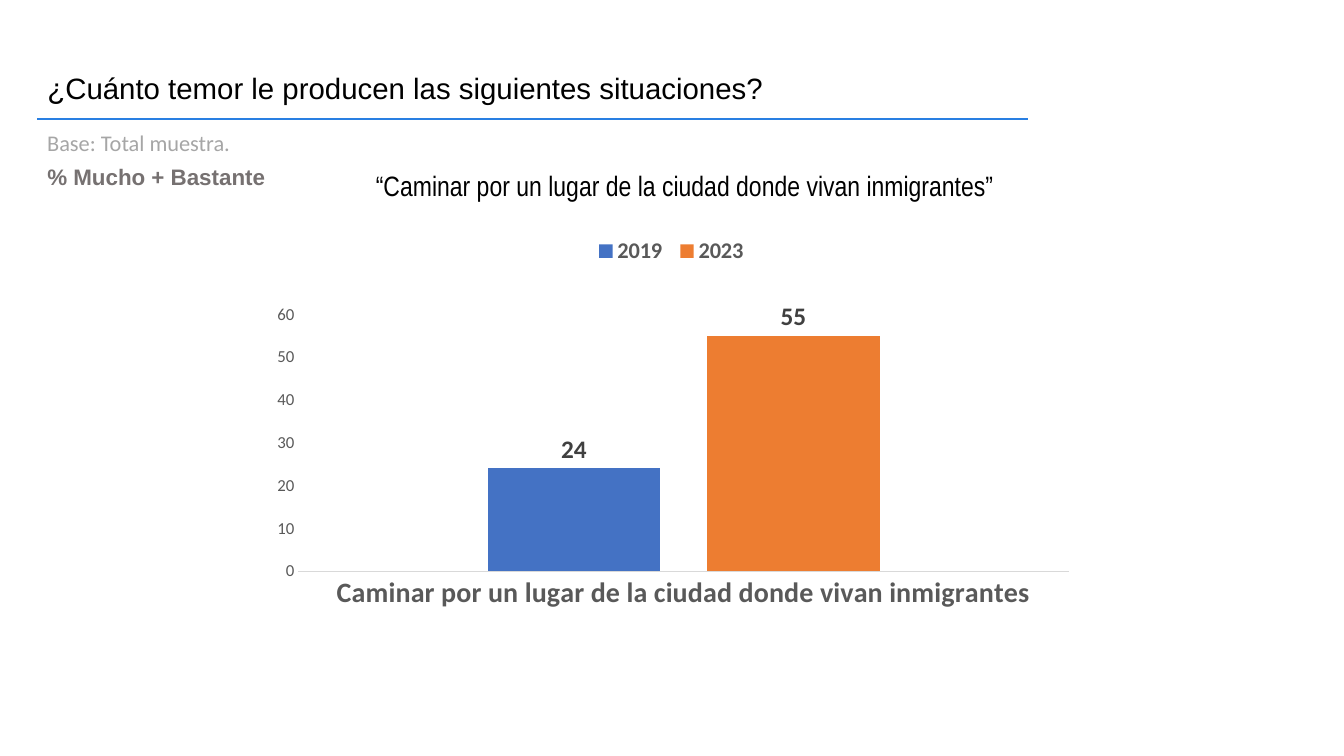
from lxml import etree
from pptx import Presentation
from pptx.chart.data import CategoryChartData
from pptx.dml.color import RGBColor
from pptx.enum.chart import XL_CHART_TYPE, XL_LABEL_POSITION, XL_LEGEND_POSITION, XL_TICK_MARK
from pptx.enum.shapes import MSO_CONNECTOR
from pptx.enum.text import MSO_ANCHOR
from pptx.oxml.ns import qn
from pptx.util import Pt

COLUMNS = XL_CHART_TYPE.COLUMN_CLUSTERED
OUTSIDE_END = XL_LABEL_POSITION.OUTSIDE_END
LEGEND_BOTTOM = XL_LEGEND_POSITION.BOTTOM
NO_TICK = XL_TICK_MARK.NONE
STRAIGHT = MSO_CONNECTOR.STRAIGHT
TOP, BOTTOM = MSO_ANCHOR.TOP, MSO_ANCHOR.BOTTOM

BLACK = RGBColor(0x00, 0x00, 0x00)
LABEL_GRAY = RGBColor(0x40, 0x40, 0x40)
AXIS_GRAY = RGBColor(0x59, 0x59, 0x59)
MEASURE_GRAY = RGBColor(0x76, 0x71, 0x71)
BASE_GRAY = RGBColor(0xA6, 0xA6, 0xA6)
LINE_GRAY = RGBColor(0xD9, 0xD9, 0xD9)
RULE_BLUE = RGBColor(0x29, 0x7F, 0xE2)
BLUE = RGBColor(0x44, 0x72, 0xC4)
ORANGE = RGBColor(0xED, 0x7D, 0x31)

# Content
TITLE = "¿Cuánto temor le producen las siguientes situaciones?"
BASE = "Base: Total muestra."
MEASURE = "% Mucho + Bastante"
SITUATION = "Caminar por un lugar de la ciudad donde vivan inmigrantes"
SERIES = [("2019", 24, BLUE), ("2023", 55, ORANGE)]

# Places in points: left, top, width, height
TITLE_BOX = (33.84, 15.12, 748, 60.5)
MEASURE_BOX = (33.84, 116.6, 340.5, 19.4)
BASE_BOX = (26.64, 88.6, 219, 26.6)
SITUATION_BOX = (261.4, 116.6, 515, 31.7)
CHART_BOX = (183.6, 168.5, 591.8, 311)
RULE_LEFT, RULE_RIGHT, RULE_TOP = 26.64, 734.4, 84.96
INSET_X, INSET_Y = 7.2, 3.6

# Fractions of the chart: left, top, width, height
PLOT_PART = {"x": 0.05, "y": 0.18, "w": 0.93, "h": 0.59}
LEGEND_PART = {"x": 0.4, "y": 0, "w": 0.2, "h": 0.07}


def set_font(font, name="Calibri", size=16, color=BLACK, bold=False):
    font.name = name
    font.size = Pt(size)
    font.bold = bold
    font.color.rgb = color


def add_text(slide, text, box, inset=True, anchor=TOP, before=0, **font_format):
    frame = slide.shapes.add_textbox(*map(Pt, box)).text_frame
    frame.word_wrap = True
    frame.vertical_anchor = anchor
    frame.margin_left = frame.margin_right = Pt(INSET_X if inset else 0)
    frame.margin_top = frame.margin_bottom = Pt(INSET_Y if inset else 0)
    paragraph = frame.paragraphs[0]
    paragraph.space_before = Pt(before)
    run = paragraph.add_run()
    run.text = text
    set_font(run.font, **font_format)


def make_layout(part, inner=False):
    layout = etree.Element(qn("c:layout"))
    manual = etree.SubElement(layout, qn("c:manualLayout"))
    settings = {"layoutTarget": "inner"} if inner else {}
    settings.update(xMode="edge", yMode="edge", **part)
    for tag, value in settings.items():
        etree.SubElement(manual, qn("c:" + tag)).set("val", str(value))
    return layout


def remove_layout(element):
    for layout in element.findall(qn("c:layout")):
        element.remove(layout)


def add_column_chart(slide):
    data = CategoryChartData()
    data.categories = [SITUATION]
    for name, value, _ in SERIES:
        data.add_series(name, [value])
    chart = slide.shapes.add_chart(COLUMNS, *map(Pt, CHART_BOX), data).chart
    set_font(chart.font, size=10)
    chart.has_title = False

    # Columns and their labels
    plot = chart.plots[0]
    plot.vary_by_categories = False
    plot.gap_width = 219
    plot.overlap = -27
    for series, (_, _, color) in zip(plot.series, SERIES):
        series.format.fill.solid()
        series.format.fill.fore_color.rgb = color
        labels = series.data_labels
        labels.show_value = True
        labels.position = OUTSIDE_END
        set_font(labels.font, size=18, color=LABEL_GRAY, bold=True)

    # Axes
    category_axis, value_axis = chart.category_axis, chart.value_axis
    for axis in (category_axis, value_axis):
        axis.major_tick_mark = axis.minor_tick_mark = NO_TICK
        axis.has_major_gridlines = False
    set_font(category_axis.tick_labels.font, size=20, color=AXIS_GRAY, bold=True)
    category_axis.format.line.color.rgb = LINE_GRAY
    category_axis.format.line.width = Pt(0.75)
    set_font(value_axis.tick_labels.font, size=12, color=AXIS_GRAY)
    value_axis.format.line.fill.background()
    value_axis.minimum_scale = 0
    value_axis.maximum_scale = 60
    value_axis.major_unit = 10

    # Legend above the plot
    chart.has_legend = True
    legend = chart.legend
    legend.position = LEGEND_BOTTOM
    legend.include_in_layout = False
    set_font(legend.font, color=AXIS_GRAY, bold=True)
    legend_element = chart.element.find(".//" + qn("c:legend"))
    remove_layout(legend_element)
    legend_element.find(qn("c:overlay")).addprevious(make_layout(LEGEND_PART))
    plot_area = chart.element.find(".//" + qn("c:plotArea"))
    remove_layout(plot_area)
    plot_area.insert(0, make_layout(PLOT_PART, inner=True))


def add_rule(slide):
    rule = slide.shapes.add_connector(
        STRAIGHT, Pt(RULE_LEFT), Pt(RULE_TOP), Pt(RULE_RIGHT), Pt(RULE_TOP))
    rule.line.color.rgb = RULE_BLUE
    rule.line.width = Pt(1.75)
    etree.SubElement(rule.element.spPr, qn("a:effectLst"))


def main():
    presentation = Presentation()
    presentation.slide_width = Pt(960)
    presentation.slide_height = Pt(540)
    slide = presentation.slides.add_slide(presentation.slide_layouts[6])

    add_text(slide, MEASURE, MEASURE_BOX, inset=False, before=4,
             name="Arial", color=MEASURE_GRAY, bold=True)
    add_text(slide, TITLE, TITLE_BOX, inset=False, anchor=BOTTOM, name="Arial", size=21)
    add_column_chart(slide)
    add_rule(slide)
    add_text(slide, BASE, BASE_BOX, color=BASE_GRAY)
    add_text(slide, f"“{SITUATION}”", SITUATION_BOX, name="Arial Narrow", size=20)
    presentation.save("out.pptx")


if __name__ == "__main__":
    main()
